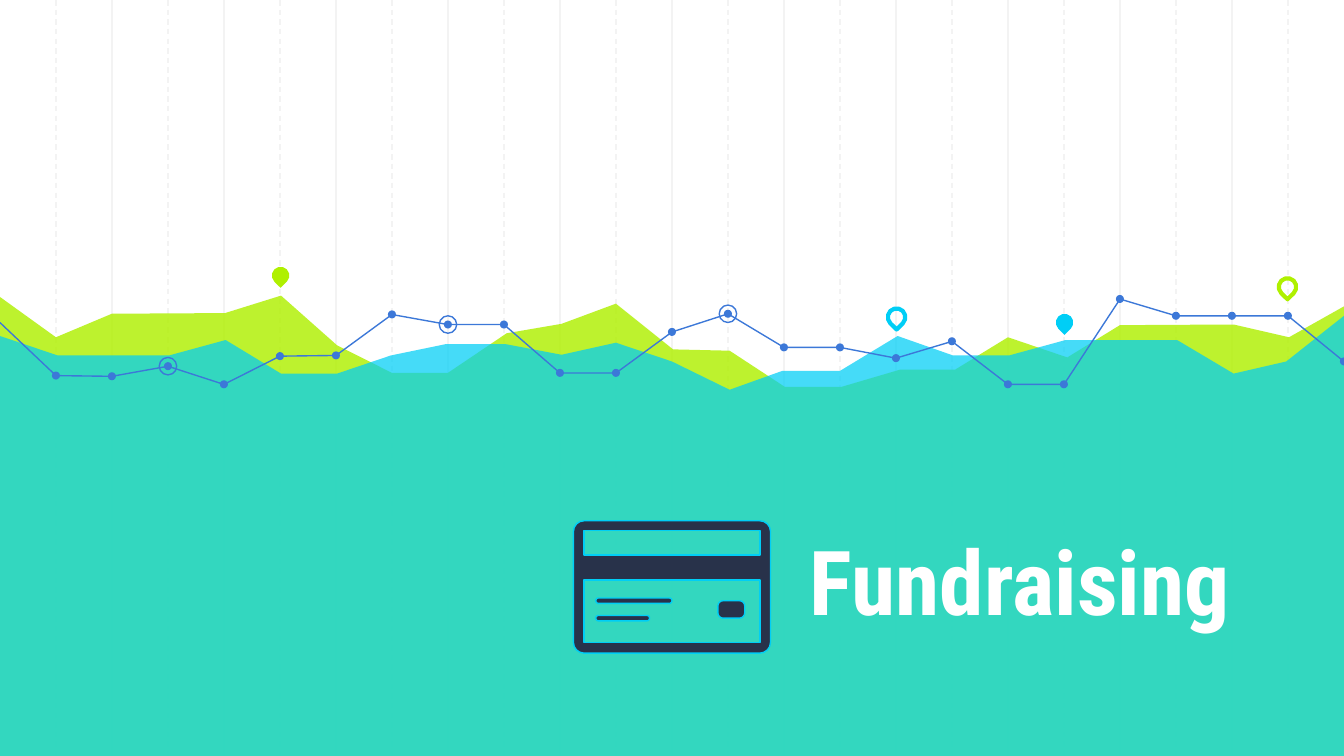
import math

import lxml.etree
import pptx
import pptx.dml.color
import pptx.enum.dml
import pptx.enum.shapes
import pptx.enum.text
import pptx.oxml.ns
import pptx.util

RGBColor = pptx.dml.color.RGBColor
SHAPE = pptx.enum.shapes.MSO_SHAPE
qn = pptx.oxml.ns.qn

WHITE = RGBColor(0xFF, 0xFF, 0xFF)
GRID = RGBColor(0xF3, 0xF3, 0xF3)
LIME = RGBColor(0xAF, 0xF0, 0x00)
CYAN = RGBColor(0x00, 0xCE, 0xF6)
BLUE = RGBColor(0x3C, 0x78, 0xD8)
NAVY = RGBColor(0x28, 0x32, 0x4A)

COLS, ROWS = 24, 56.25
FONT = "Roboto Condensed"

LIME_AREA = [
    (0, 22.1), (1, 25.1), (2, 23.35), (4.02, 23.3), (5.02, 22), (6.02, 25.7),
    (7, 27.75), (8, 27.75), (9.05, 24.8), (10.03, 24.1), (11, 22.6),
    (12.02, 26), (13.03, 26.1), (14.02, 28.8), (15.02, 28.8), (16.08, 27.5),
    (17.06, 27.5), (18, 25.1), (19.06, 26.6), (20, 24.2), (22.03, 24.15),
    (23.02, 25.1), (24, 22.8),
]
CYAN_AREA = [
    (0, 25), (1.03, 26.45), (3.02, 26.45), (4.03, 25.3), (5.02, 27.8),
    (6.02, 27.8), (6.98, 26.45), (7.97, 25.6), (9.02, 25.6), (10.03, 26.4),
    (11, 25.5), (12, 26.9), (13.03, 29), (13.97, 27.6), (15, 27.6),
    (16.03, 25), (17.02, 26.45), (18.02, 26.45), (19.03, 25.3),
    (21.02, 25.3), (22.03, 27.8), (22.97, 26.9), (24, 23.5),
]
TREND = [
    24, 27.95, 28, 27.25, 28.6, 26.5, 26.45, 23.4, 24.15, 24.15, 27.75, 27.75,
    24.7, 23.35, 25.85, 25.85, 26.65, 25.4, 28.6, 28.6, 22.25, 23.5, 23.5,
    23.5, 26.9,
]
RINGS = [3, 8, 13]
PINS = [(5.01, 20.5, LIME, True), (16.01, 23.6, CYAN, False),
        (19.01, 24, CYAN, True), (22.99, 21.35, LIME, False)]
STRIPES = [(10.64, 44.5, 12, 44.9, 0.2), (10.64, 45.8, 11.6, 46.2, 0.2),
           (12.82, 44.7, 13.3, 46, 0.4)]


class Canvas:
    def __init__(self, prs):
        self.s = prs.slides.add_slide(prs.slide_layouts[6])
        self.col = prs.slide_width / COLS
        self.row = prs.slide_height / ROWS

    def at(self, x, y):
        return round(x * self.col), round(y * self.row)

    def style(self, sp, fill=None, line=None, width=0.75, alpha=None):
        sp.shadow.inherit = False
        if fill is None:
            sp.fill.background()
        else:
            sp.fill.solid()
            sp.fill.fore_color.rgb = fill
        if alpha is not None:
            color = sp._element.spPr.find(qn("a:solidFill")).find(qn("a:srgbClr"))
            lxml.etree.SubElement(color, qn("a:alpha")).set("val", str(alpha * 1000))
        if line is None:
            sp.line.fill.background()
        else:
            sp.line.color.rgb = line
            sp.line.width = pptx.util.Pt(width)

    def gridline(self, x, dashed):
        line = self.s.shapes.add_connector(
            pptx.enum.shapes.MSO_CONNECTOR.STRAIGHT, *self.at(x, 0), *self.at(x, ROWS))
        line.line.color.rgb = GRID
        line.line.width = pptx.util.Pt(0.75)
        if dashed:
            line.line.dash_style = pptx.enum.dml.MSO_LINE.DASH
        lxml.etree.SubElement(line._element.spPr, qn("a:effectLst"))

    def outline(self, contours, close=True, **style):
        first, *others = [[self.at(*p) for p in c] for c in contours]
        builder = self.s.shapes.build_freeform(*first[0])
        builder.add_line_segments(first[1:], close=close)
        for points in others:
            builder.move_to(*points[0])
            builder.add_line_segments(points[1:], close=close)
        self.style(builder.convert_to_shape(), **style)

    def area(self, points, color, alpha):
        self.outline([points + [(COLS, ROWS), (0, ROWS)]], fill=color, alpha=alpha)

    def marker(self, shape, x, y, size, **style):
        left, top = self.at(x, y)
        d = round(size * self.row)
        sp = self.s.shapes.add_shape(shape, left - d // 2, top - d // 2, d, d)
        self.style(sp, **style)
        return sp

    def pin(self, x, y, color, solid):
        style = {"fill": color} if solid else {"line": color, "width": 2.25}
        self.marker(SHAPE.TEAR, x, y, 1.3, **style).rotation = 135

    def rounded(self, left, top, right, bottom, r, steps=4):
        rx = r * self.row / self.col
        corners = [(right - rx, top + r, 270), (right - rx, bottom - r, 0),
                   (left + rx, bottom - r, 90), (left + rx, top + r, 180)]
        return [(x + rx * math.cos(a), y + r * math.sin(a))
                for x, y, start in corners
                for a in (math.radians(start + 90 * i / steps) for i in range(steps + 1))]

    def card(self):
        holes = [[(10.43, top), (10.43, bottom), (13.57, bottom), (13.57, top)]
                 for top, bottom in ((39.5, 41.3), (43.15, 47.8))]
        body = self.rounded(10.24, 38.75, 13.76, 48.6, 0.8)
        self.outline(holes + [body], fill=NAVY, line=CYAN)
        for stripe in STRIPES:
            self.outline([self.rounded(*stripe)], fill=NAVY, line=CYAN)

    def title(self, text, x, y, w, h):
        tf = self.s.shapes.add_textbox(*self.at(x, y), *self.at(w, h)).text_frame
        tf.word_wrap = True
        tf.vertical_anchor = pptx.enum.text.MSO_ANCHOR.MIDDLE
        tf.margin_left = tf.margin_right = pptx.util.Inches(0.1)
        tf.margin_top = tf.margin_bottom = pptx.util.Inches(0.1)
        tf.text = text
        p = tf.paragraphs[0]
        p.alignment = pptx.enum.text.PP_ALIGN.RIGHT
        font = p.runs[0].font
        font.name, font.size, font.bold = FONT, pptx.util.Pt(48), True
        font.color.rgb = WHITE


def main():
    prs = pptx.Presentation()
    prs.slide_width = pptx.util.Inches(10)
    prs.slide_height = prs.slide_width * 9 // 16
    canvas = Canvas(prs)

    for start, dashed in ((2, False), (1, True)):
        for x in range(start, COLS, 2):
            canvas.gridline(x, dashed)

    canvas.area(LIME_AREA, LIME, 82)
    canvas.area(CYAN_AREA, CYAN, 73)

    trend = list(enumerate(TREND))
    for first, last in ((0, 11), (11, 20), (20, 24)):
        canvas.outline([trend[first:last + 1]], close=False, line=BLUE)
    for x, y in trend[1:]:
        canvas.marker(SHAPE.OVAL, x, y, 0.6, fill=BLUE)
    for x in RINGS:
        canvas.marker(SHAPE.OVAL, x, TREND[x], 1.3, line=BLUE)
    for pin in PINS:
        canvas.pin(*pin)

    canvas.title("Fundraising", 7.46, 36.8, 14.74, 12.7)
    canvas.card()
    prs.save("out.pptx")


if __name__ == "__main__":
    main()
